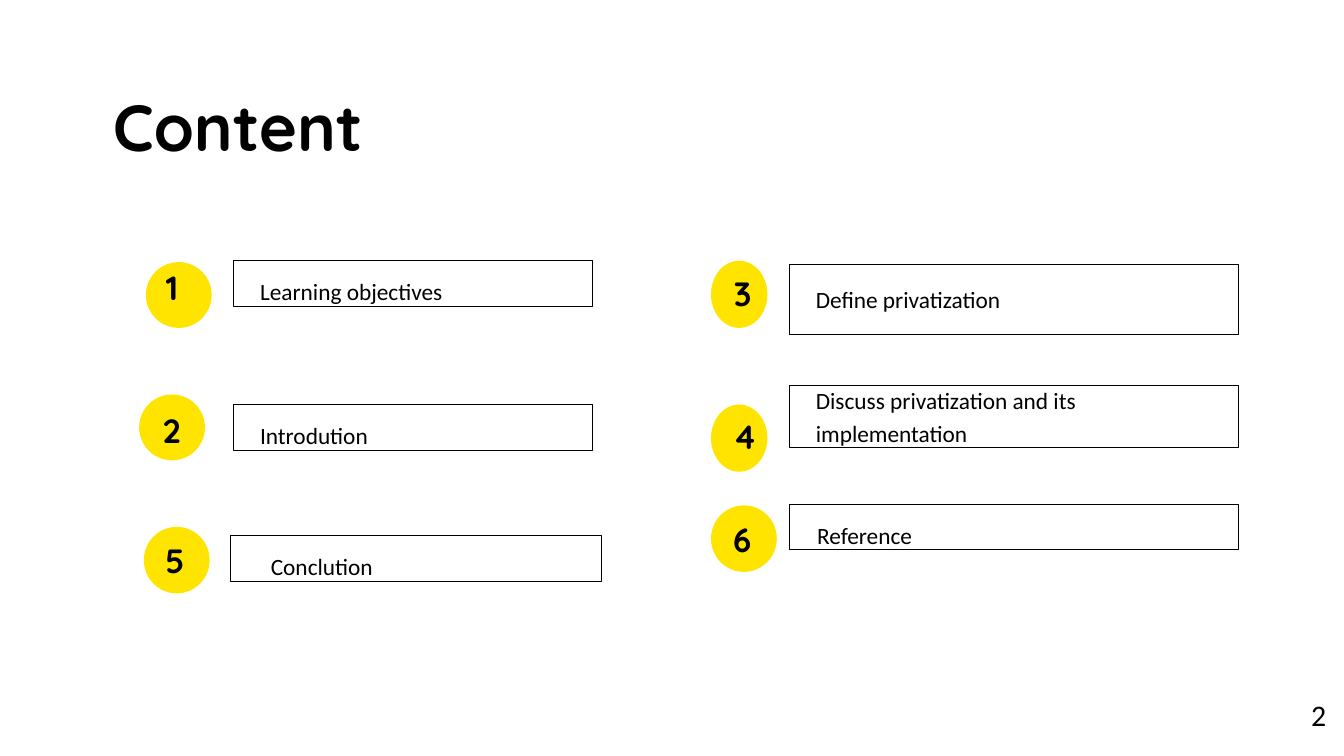
from pptx import Presentation
from pptx.dml.color import RGBColor
from pptx.enum.shapes import MSO_SHAPE
from pptx.enum.text import MSO_ANCHOR, MSO_AUTO_SIZE, PP_ALIGN
from pptx.util import Inches, Pt

BLACK = RGBColor(0x00, 0x00, 0x00)
YELLOW = RGBColor(0xFF, 0xE4, 0x00)
OVAL, RECTANGLE = MSO_SHAPE.OVAL, MSO_SHAPE.RECTANGLE
TOP, LEFT = MSO_ANCHOR.TOP, PP_ALIGN.LEFT
FIT_SHAPE = MSO_AUTO_SIZE.SHAPE_TO_FIT_TEXT
HEADING_FONT, BODY_FONT = "Quicksand", "Calibri"


def write(shape, lines, size, font, bold=False, top_inset=0.02, indent=0.01):
    frame = shape.text_frame
    frame.word_wrap = True
    frame.auto_size = FIT_SHAPE
    frame.vertical_anchor = TOP
    frame.margin_left = frame.margin_right = frame.margin_bottom = 0
    frame.margin_top = Inches(top_inset)
    for index, line in enumerate(lines):
        paragraph = frame.add_paragraph() if index else frame.paragraphs[0]
        paragraph.alignment = LEFT
        paragraph.space_before = Pt(5 if index else 0)
        properties = paragraph._p.get_or_add_pPr()
        properties.set("marL", str(Inches(indent)))
        properties.set("indent", "0")
        run = paragraph.add_run()
        run.text = line
        run.font.size = Pt(size)
        run.font.name = font
        run.font.bold = bold
        run.font.color.rgb = BLACK


def place(kind, box):
    shape = slide.shapes.add_shape(kind, *[Inches(value) for value in box])
    shape.shadow.inherit = False
    return shape


presentation = Presentation()
presentation.slide_width = Inches(20)
presentation.slide_height = Inches(11.25)
slide = presentation.slides.add_slide(presentation.slide_layouts[5])

# Title
title = slide.shapes.title
title.left, title.top = Inches(1.67), Inches(1.28)
title.width, title.height = Inches(3.92), Inches(1.19)
write(title, ["Content"], 70, HEADING_FONT, True, top_inset=0.01)

# Agenda: number, circle box, number box, label box, top inset, indent, lines
agenda = [
    ("1", (2.17, 3.9, 0.98, 0.98), (2.46, 3.95, 0.2, 0.63),
     (3.48, 3.88, 5.33, 0.68), 0.25, 0.39, ["Learning objectives"]),
    ("2", (2.07, 5.87, 0.98, 0.98), (2.41, 6.08, 0.32, 0.63),
     (3.48, 6.02, 5.33, 0.68), 0.25, 0.39, ["Introdution"]),
    ("3", (10.58, 3.88, 0.84, 1), (10.91, 4.04, 0.28, 0.65),
     (11.75, 3.93, 6.68, 1.04), 0.32, 0.39, ["Define privatization"]),
    ("4", (10.58, 6.02, 0.84, 1), (10.9, 6.17, 0.3, 0.65),
     (11.75, 5.74, 6.68, 0.92), 0.01, 0.39,
     ["Discuss privatization and its", "implementation"]),
    ("5", (2.14, 7.84, 0.98, 0.99), (2.45, 8.01, 0.34, 0.63),
     (3.43, 7.97, 5.52, 0.68), 0.25, 0.6, ["Conclution"]),
    ("6", (10.58, 7.52, 0.98, 0.99), (10.9, 7.7, 0.35, 0.63),
     (11.75, 7.5, 6.68, 0.68), 0.25, 0.41, ["Reference"]),
]
for number, circle_box, number_box, label_box, top_inset, indent, lines in agenda:
    circle = place(OVAL, circle_box)
    circle.fill.solid()
    circle.fill.fore_color.rgb = YELLOW
    circle.line.fill.background()

    number_text = slide.shapes.add_textbox(*[Inches(value) for value in number_box])
    write(number_text, [number], 36, HEADING_FONT, True)

    label = place(RECTANGLE, label_box)
    label.fill.background()
    label.line.color.rgb = BLACK
    label.line.width = Pt(0.77)
    write(label, lines, 25, BODY_FONT, top_inset=top_inset, indent=indent)

# Page number
page_number = slide.shapes.add_textbox(Inches(19.5), Inches(10.35), Inches(0.28), Inches(0.56))
write(page_number, ["2"], 32, BODY_FONT)

presentation.save("out.pptx")
